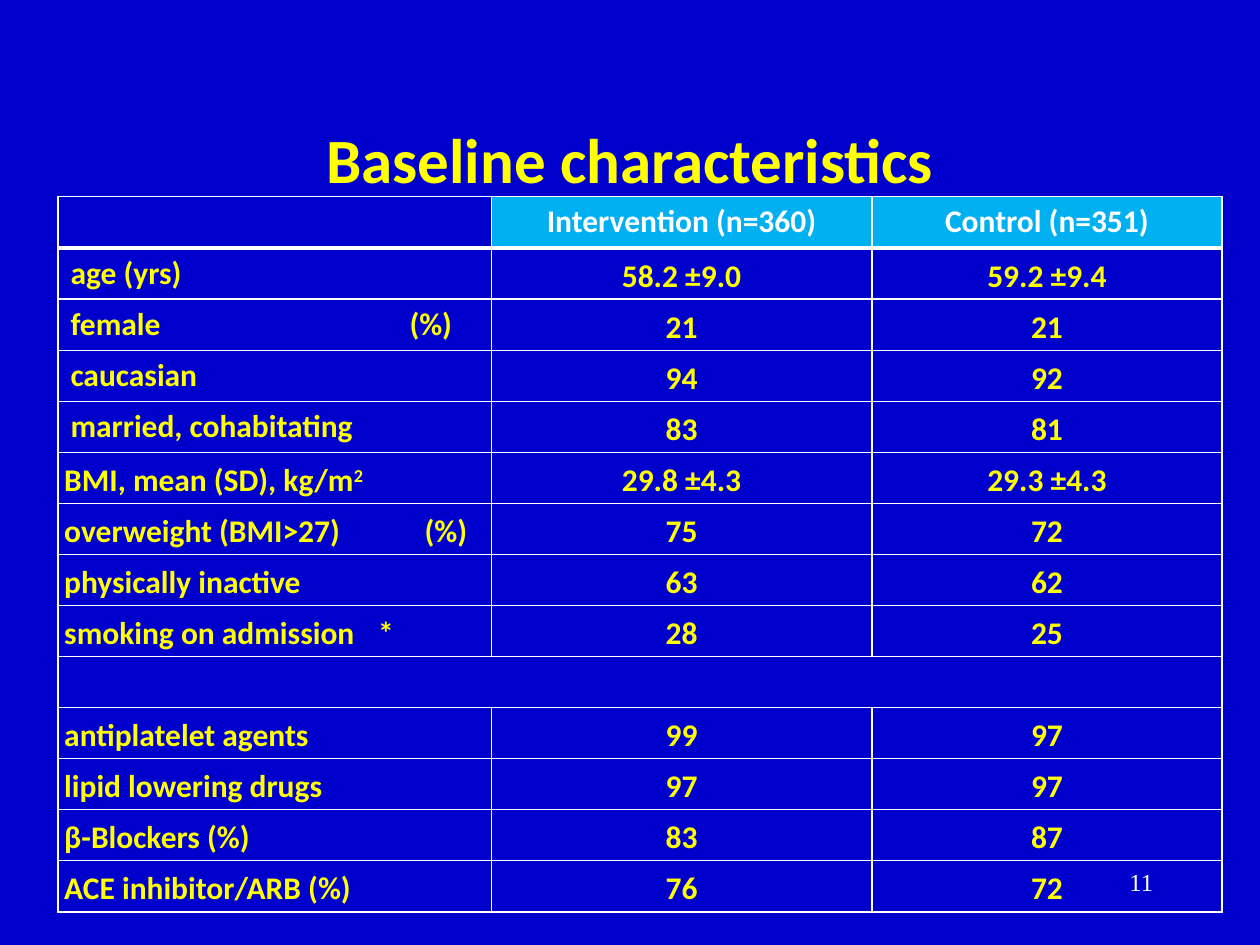
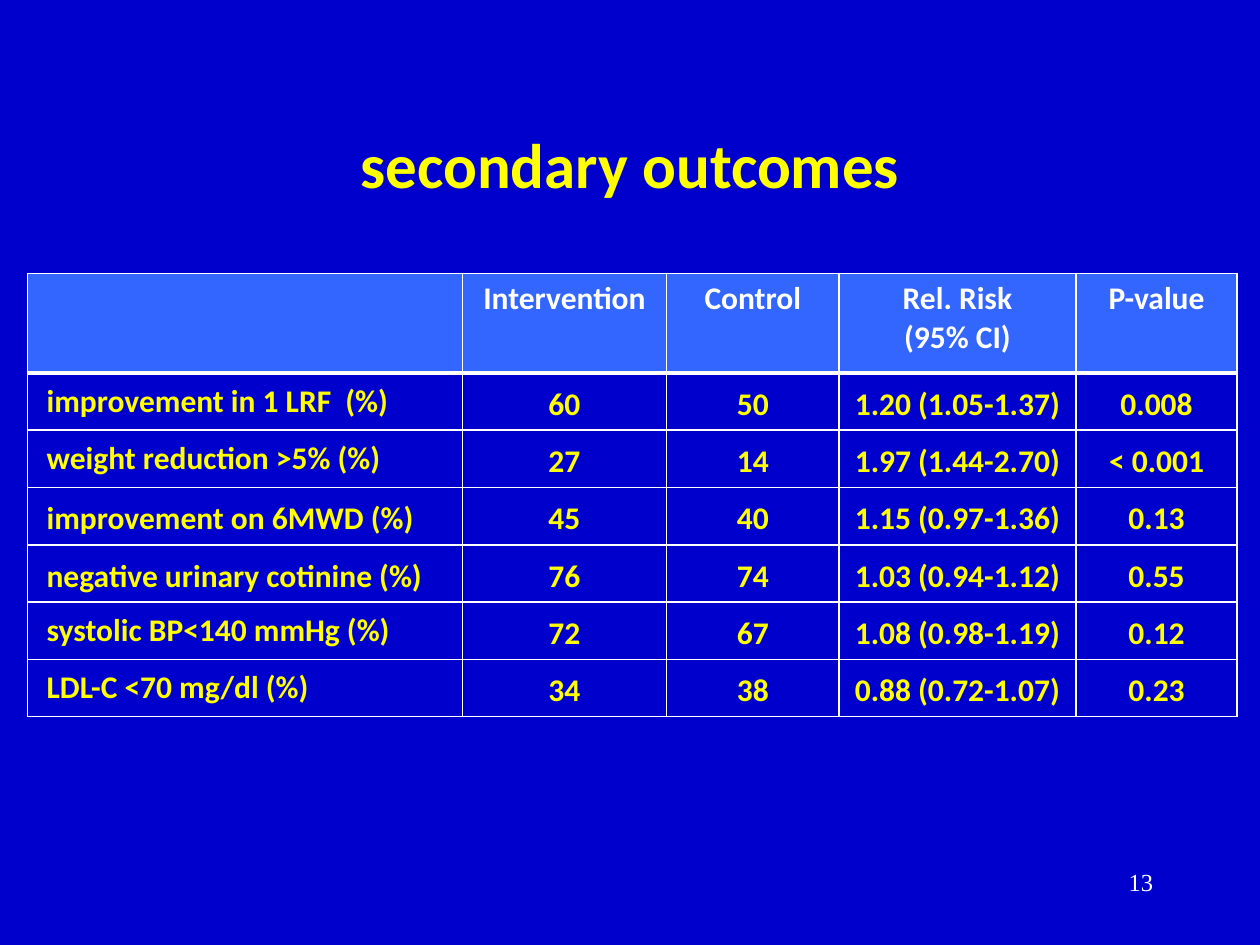
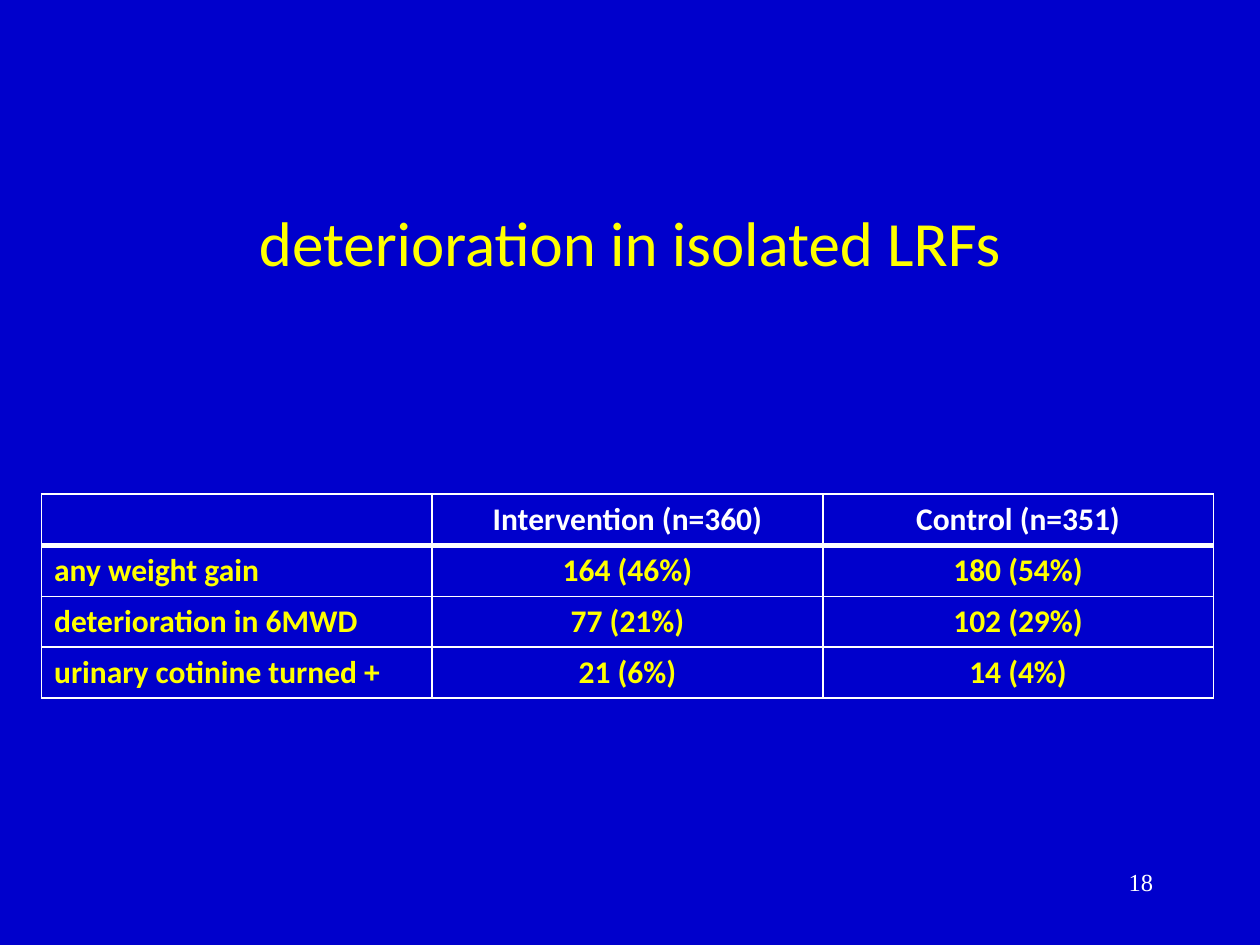
import pptx
import pptx.dml.color
import pptx.enum.text
import pptx.oxml
import pptx.oxml.ns
import pptx.util
from dataclasses import dataclass

Inches, Pt = pptx.util.Inches, pptx.util.Pt
ALIGN = pptx.enum.text.PP_ALIGN
ANCHOR = pptx.enum.text.MSO_ANCHOR


@dataclass(frozen=True)
class Theme:
    background: str = "0000CC"
    accent: str = "FFFF00"
    light: str = "FFFFFF"
    title_size: int = 36
    table_size: int = 18
    number_size: int = 14
    font: str = "Calibri"
    number_font: str = "Times New Roman"
    grid_line: float = 1
    header_line: float = 3
    tight_spacing: float = 1.15


THEME = Theme()

# Content: a body row is (label, label is loose, *values); "^" marks a
# superscript, and a label's tab stop is listed under "tabs"
SLIDES = [
    {
        "title": "Baseline characteristics", "title_top": 0.63, "bold": True, "number": "11",
        "box": (0.46, 1.56, 9.24, 5.68), "columns": (3.44, 3.02, 2.78), "header_height": 0.41,
        "header": ("", "Intervention (n=360)", "Control (n=351)"),
        "header_fills": (None, "00B0F0", "00B0F0"),
        "inset": 0.05, "loose_values": False,
        "tabs": {"female": 2.69, "overweight (BMI>27)": 2.86, "smoking on admission": 2.49},
        "rows": [
            ("age (yrs)", True, "58.2 ±9.0", "59.2 ±9.4"),
            ("female\t(%)", True, "21", "21"),
            ("caucasian", True, "94", "92"),
            ("married, cohabitating", True, "83", "81"),
            ("BMI, mean (SD), kg/m^2", False, "29.8 ±4.3", "29.3 ±4.3"),
            ("overweight (BMI>27)\t(%)", False, "75", "72"),
            ("physically inactive", False, "63", "62"),
            ("smoking on admission\t*", False, "28", "25"),
            None,
            ("antiplatelet agents", False, "99", "97"),
            ("lipid lowering drugs", False, "97", "97"),
            ("β-Blockers (%)", False, "83", "87"),
            ("ACE inhibitor/ARB (%)", False, "76", "72"),
        ],
    },
    {
        "title": "secondary outcomes", "title_top": 0.67, "bold": True, "number": "13",
        "box": (0.22, 2.17, 9.6, 3.52), "columns": (3.45, 1.62, 1.37, 1.88, 1.28), "header_height": 0.79,
        "header": ("", "Intervention", "Control", "Rel. Risk\n(95% CI)", "P-value"),
        "header_fills": ("3366FF",) * 5,
        "inset": 0.04, "label_inset": 0.15, "loose_values": False,
        "rows": [
            ("improvement in 1 LRF  (%)", True, "60", "50", "1.20 (1.05-1.37)", "0.008"),
            ("weight reduction >5% (%)", True, "27", "14", "1.97 (1.44-2.70)", "< 0.001"),
            ("improvement on 6MWD (%)", False, "45", "40", "1.15 (0.97-1.36)", "0.13"),
            ("negative urinary cotinine (%)", False, "76", "74", "1.03 (0.94-1.12)", "0.55"),
            ("systolic BP<140 mmHg (%)", True, "72", "67", "1.08 (0.98-1.19)", "0.12"),
            ("LDL-C <70 mg/dl (%)", True, "34", "38", "0.88 (0.72-1.07)", "0.23"),
        ],
    },
    {
        "title": "deterioration in isolated LRFs", "title_top": 1.29, "bold": False, "number": "18",
        "box": (0.33, 3.92, 9.3, 1.62), "columns": (3.1, 3.1, 3.1), "header_height": 0.41,
        "header": ("", "Intervention (n=360)", "Control (n=351)"),
        "header_fills": (None,) * 3,
        "inset": 0.1, "loose_values": True,
        "rows": [
            ("any weight gain", True, "164 (46%)", "180 (54%)"),
            ("deterioration in 6MWD", True, "77 (21%)", "102 (29%)"),
            ("urinary cotinine turned +", True, "21 (6%)", "14 (4%)"),
        ],
    },
]


def rgb(color):
    return pptx.dml.color.RGBColor.from_string(color)


def write(frame, text, align, size, color, bold=False, font=THEME.font, spacing=None, tab=None):
    for index, line in enumerate(text.split("\n")):
        paragraph = frame.add_paragraph() if index else frame.paragraphs[0]
        paragraph.alignment = align
        if spacing:
            paragraph.line_spacing = spacing
        if tab:
            stops = pptx.oxml.parse_xml(
                f'<a:tabLst {pptx.oxml.ns.nsdecls("a")}><a:tab pos="{Inches(tab)}" algn="l"/></a:tabLst>')
            paragraph._p.get_or_add_pPr().append(stops)
        for part, piece in enumerate(line.split("^")):
            run = paragraph.add_run()
            run.text = piece
            run.font.name, run.font.size, run.font.bold = font, Pt(size), bold
            run.font.color.rgb = rgb(color)
            if part:
                run.font._element.set("baseline", "30000")


def add_text(slide, box, text, align, anchor, **style):
    frame = slide.shapes.add_textbox(*map(Inches, box)).text_frame
    frame.word_wrap = True
    frame.vertical_anchor = anchor
    write(frame, text, align, **style)


def style_cell(cell, fill, top, bottom):
    borders = {"L": THEME.grid_line, "R": THEME.grid_line, "T": top, "B": bottom}
    for side, width in borders.items():
        cell._tc.get_or_add_tcPr().append(pptx.oxml.parse_xml(
            f'<a:ln{side} {pptx.oxml.ns.nsdecls("a")} w="{Pt(width)}"><a:solidFill>'
            f'<a:srgbClr val="{THEME.light}"/></a:solidFill></a:ln{side}>'))
    if fill:
        cell.fill.solid()
        cell.fill.fore_color.rgb = rgb(fill)
    else:
        cell.fill.background()


def fill_body_cell(cell, text, loose, inset, align, tab=None):
    cell.vertical_anchor = ANCHOR.MIDDLE
    cell.margin_left = cell.margin_right = Inches(inset)
    cell.margin_top = cell.margin_bottom = Inches(0.05 if loose else 0)
    write(cell.text_frame, text, align, THEME.table_size, THEME.accent, True,
          spacing=None if loose else THEME.tight_spacing, tab=tab)


def add_results(slide, content):
    rows, columns = content["rows"], content["columns"]
    table = slide.shapes.add_table(len(rows) + 1, len(columns), *map(Inches, content["box"])).table
    table.first_row = table.horz_banding = False
    for column, width in zip(table.columns, columns):
        column.width = Inches(width)
    body_height = (content["box"][3] - content["header_height"]) / len(rows)
    for index, row in enumerate(table.rows):
        row.height = Inches(body_height if index else content["header_height"])
        for cell, fill in zip(row.cells, content["header_fills"]):
            style_cell(cell, None if index else fill,
                       THEME.header_line if index == 1 else THEME.grid_line,
                       THEME.grid_line if index else THEME.header_line)

    # Header row
    for cell, heading in zip(table.rows[0].cells, content["header"]):
        if heading:
            write(cell.text_frame, heading, ALIGN.CENTER, THEME.table_size, THEME.light, True)

    # Body rows; None is an empty row across the table
    for index, row in enumerate(rows, 1):
        if row is None:
            table.cell(index, 0).merge(table.cell(index, len(columns) - 1))
            continue
        label, loose, *values = row
        label_inset = content.get("label_inset", 0.1 if loose else content["inset"])
        tab = content.get("tabs", {}).get(label.split("\t")[0])
        fill_body_cell(table.cell(index, 0), label, loose, label_inset, ALIGN.LEFT, tab)
        for column, value in enumerate(values, 1):
            fill_body_cell(table.cell(index, column), value, content["loose_values"],
                           content["inset"], ALIGN.CENTER)


def main():
    deck = pptx.Presentation()
    deck.slide_width, deck.slide_height = Inches(10), Inches(7.5)
    for content in SLIDES:
        slide = deck.slides.add_slide(deck.slide_layouts[6])
        slide.background.fill.solid()
        slide.background.fill.fore_color.rgb = rgb(THEME.background)
        add_text(slide, (0.75, content["title_top"], 8.5, 1.25), content["title"], ALIGN.CENTER,
                 ANCHOR.MIDDLE, size=THEME.title_size, color=THEME.accent, bold=content["bold"])
        add_text(slide, (7.17, 6.83, 2.08, 0.5), content["number"], ALIGN.RIGHT, ANCHOR.TOP,
                 size=THEME.number_size, color=THEME.light, font=THEME.number_font)
        add_results(slide, content)
    deck.save("out.pptx")


if __name__ == "__main__":
    main()
